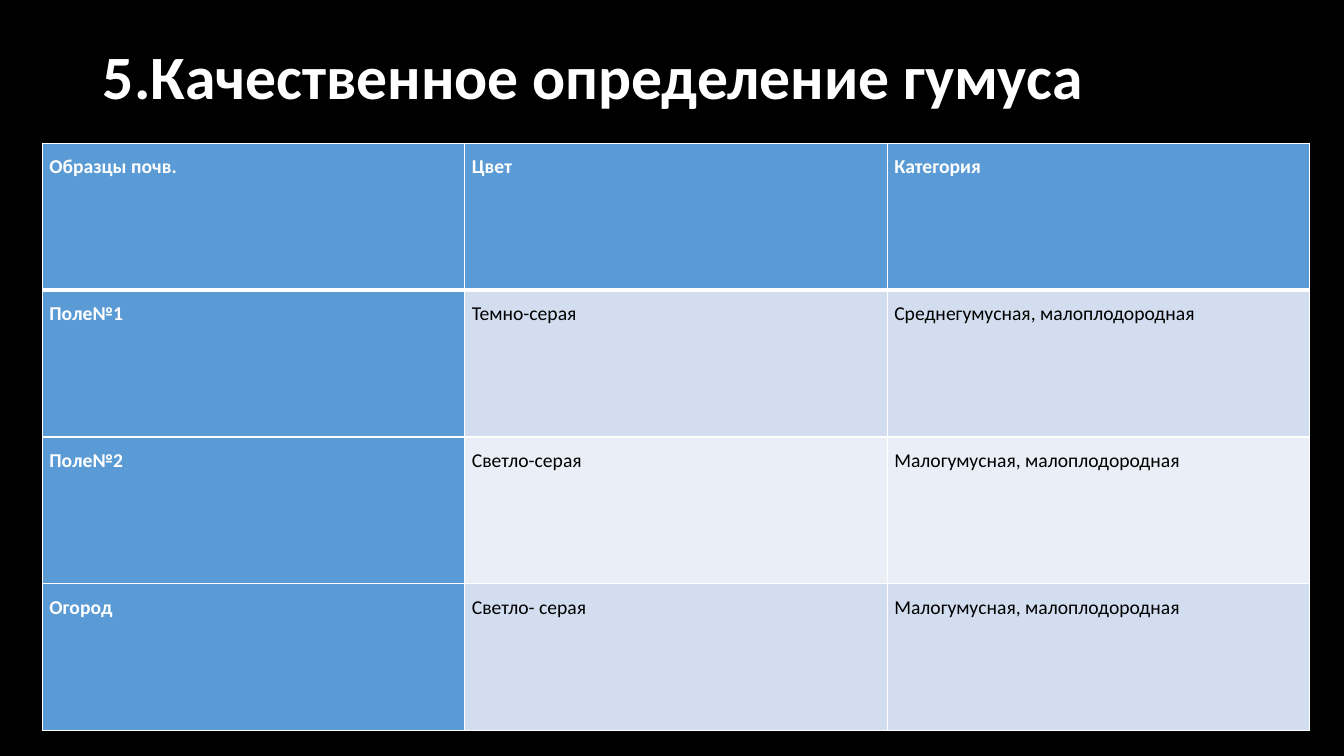
from lxml import etree
from pptx import Presentation
from pptx.dml.color import RGBColor
from pptx.enum.text import MSO_ANCHOR, MSO_AUTO_SIZE, PP_ALIGN
from pptx.oxml.ns import qn
from pptx.util import Inches, Pt

LEFT, JUSTIFY = PP_ALIGN.LEFT, PP_ALIGN.JUSTIFY
MIDDLE, NO_FIT = MSO_ANCHOR.MIDDLE, MSO_AUTO_SIZE.NONE
BLACK = RGBColor(0x00, 0x00, 0x00)
WHITE = RGBColor(0xFF, 0xFF, 0xFF)
BLUE = RGBColor(0x5B, 0x9B, 0xD5)
BANDS = [RGBColor(0xEA, 0xEF, 0xF7), RGBColor(0xD2, 0xDE, 0xEF)]
FONT = "Calibri"

ROWS = [
    ["Образцы почв.", "Цвет", "Категория"],
    ["Поле№1", "Темно-серая", "Среднегумусная, малоплодородная"],
    ["Поле№2", "Светло-серая", "Малогумусная, малоплодородная"],
    ["Огород", "Светло- серая", "Малогумусная, малоплодородная"],
]


def add_run(p, text, size, color, bold):
    r = p.add_run()
    r.text = text
    r.font.name = FONT
    r.font.size = Pt(size)
    r.font.bold = bold
    r.font.color.rgb = color


def add_border(cell, side, width):
    ln = etree.SubElement(cell._tc.get_or_add_tcPr(), qn(f"a:ln{side}"), w=str(Pt(width)))
    fill = etree.SubElement(ln, qn("a:solidFill"))
    etree.SubElement(fill, qn("a:srgbClr"), val=str(WHITE))


prs = Presentation()
prs.slide_width, prs.slide_height = Inches(13.33), Inches(7.5)
s = prs.slides.add_slide(prs.slide_layouts[5])
s.background.fill.solid()
s.background.fill.fore_color.rgb = BLACK

# Title, lifted above the table by its bottom margin
title = s.shapes.title
title.left, title.top = Inches(0.92), Inches(0.4)
title.width, title.height = Inches(11.5), Inches(1.45)
tf = title.text_frame
tf.word_wrap = True
tf.auto_size = NO_FIT
tf.vertical_anchor = MIDDLE
tf.margin_bottom = Inches(0.72)
p = tf.paragraphs[0]
p.alignment = LEFT
p.line_spacing = 0.9
add_run(p, "5.Качественное определение гумуса", 44, WHITE, True)

# Table of soil samples
table = s.shapes.add_table(len(ROWS), len(ROWS[0]), Inches(0.42), Inches(1.42),
                           Inches(12.57), Inches(5.83)).table
table.first_col = True

for i, row in enumerate(ROWS):
    for j, text in enumerate(row):
        cell = table.cell(i, j)
        heading = i == 0 or j == 0
        cell.margin_left = cell.margin_right = Inches(0.07)
        cell.margin_top = cell.margin_bottom = 0

        # Borders come before the fill; the header rule is thicker
        for side in "LRTB":
            header_rule = (i, side) in [(0, "B"), (1, "T")]
            add_border(cell, side, 3 if header_rule else 1)
        cell.fill.solid()
        cell.fill.fore_color.rgb = BLUE if heading else BANDS[i % 2]

        p = cell.text_frame.paragraphs[0]
        p.alignment = JUSTIFY
        p.line_spacing = 1.5
        add_run(p, text, 14, WHITE if heading else BLACK, heading)

prs.save("out.pptx")
